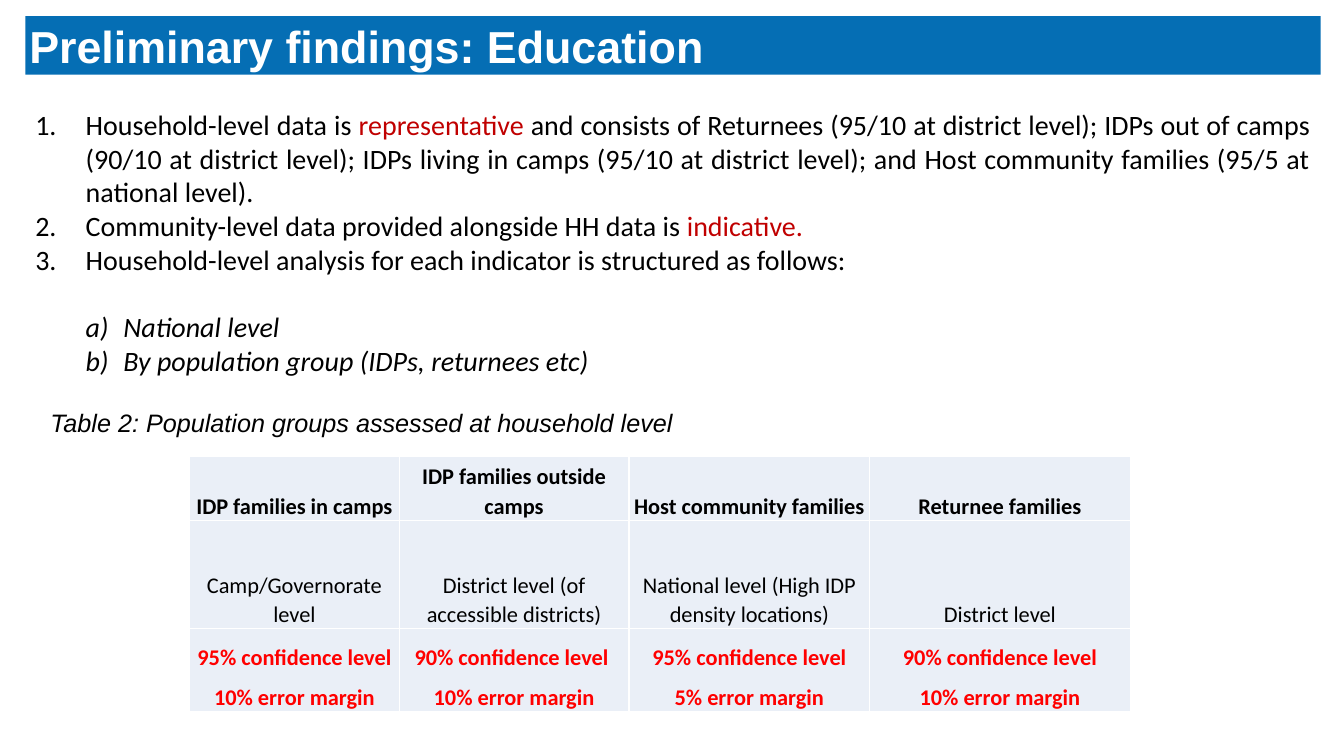
from lxml import etree
from pptx import Presentation
from pptx.dml.color import RGBColor
from pptx.enum.shapes import MSO_SHAPE
from pptx.enum.text import MSO_ANCHOR, PP_ALIGN
from pptx.oxml.ns import qn
from pptx.util import Cm, Pt

RECT = MSO_SHAPE.RECTANGLE
MIDDLE, BOTTOM = MSO_ANCHOR.MIDDLE, MSO_ANCHOR.BOTTOM
LEFT, CENTER, JUSTIFY = PP_ALIGN.LEFT, PP_ALIGN.CENTER, PP_ALIGN.JUSTIFY

COLORS = {"blue": "056EB4", "white": "FFFFFF", "black": "000000",
          "dark red": "C00000", "red": "FF0000", "pale": "EAEFF7"}

TITLE = "Preliminary findings: Education"
NOTES = [
    [("Household-level data is ", "black"),
     ("representative ", "dark red"),
     ("and consists of Returnees (95/10 at district level); IDPs out of camps "
      "(90/10 at district level); IDPs living in camps (95/10 at district level); "
      "and Host community families (95/5 at national level). ", "black")],
    [("Community-level data provided alongside HH data is ", "black"),
     ("indicative. ", "dark red")],
    [("Household-level analysis for each indicator is structured as follows:", "black")],
]
LEVELS = ["National level ", "By population group (IDPs, returnees etc)"]
CAPTION = "Table 2: Population groups assessed at household level"
GROUPS = [
    ["IDP families in camps", "IDP families outside camps",
     "Host community families", "Returnee families"],
    ["Camp/Governorate level", "District level (of accessible districts)",
     "National level (High IDP density locations)", "District level"],
    ["95% confidence level\n10% error margin", "90% confidence level \n10% error margin",
     "95% confidence level\n5% error margin", "90% confidence level\n10% error margin"],
]
STYLES = [("black", True), ("black", False), ("red", True)]
WIDTHS = [5.28, 5.79, 6.07, 6.56]
HEIGHTS = [1.62, 2.73, 2.1]


def rgb(name):
    return RGBColor.from_string(COLORS[name])


def style(font, face, size, color, bold=False, italic=False):
    font.name, font.size = face, Pt(size)
    font.color.rgb = rgb(color)
    font.bold, font.italic = bold, italic


def indent(para, left, hang, number=None):
    props = para._p.get_or_add_pPr()
    props.set("marL", str(Cm(left)))
    props.set("indent", str(-Cm(hang)))
    if number:
        etree.SubElement(props, qn("a:buFont"), typeface="+mj-lt")
        etree.SubElement(props, qn("a:buAutoNum"), type=number)


def border(cell):
    props = cell._tc.get_or_add_tcPr()
    for side in ("lnL", "lnR", "lnT", "lnB"):
        line = etree.SubElement(props, qn("a:" + side), w=str(Pt(1)))
        fill = etree.SubElement(line, qn("a:solidFill"))
        etree.SubElement(fill, qn("a:srgbClr"), val=COLORS["white"])


def add_title(slide):
    bar = slide.shapes.add_shape(RECT, Cm(0.64), Cm(0.41), Cm(32.64), Cm(1.47))
    bar.shadow.inherit = False
    bar.fill.solid()
    bar.fill.fore_color.rgb = rgb("blue")
    bar.line.fill.background()
    frame = bar.text_frame
    frame.margin_left = frame.margin_right = 0
    frame.margin_top = frame.margin_bottom = 0
    frame.vertical_anchor = MIDDLE
    frame.text = TITLE
    para = frame.paragraphs[0]
    para.alignment, para.space_before = LEFT, Pt(8)
    indent(para, 1.07, 0.97)
    style(para.font, "Arial", 32, "white", bold=True)


def add_notes(slide):
    frame = slide.shapes.add_textbox(Cm(0.64), Cm(2.59), Cm(32.64), Cm(15.65)).text_frame
    frame.word_wrap = True
    items = [(runs, 0) for runs in NOTES] + [([(text, "black")], 1) for text in LEVELS]
    for i, (runs, level) in enumerate(items):
        para = frame.add_paragraph() if i else frame.paragraphs[0]
        para.alignment, para.level = JUSTIFY, level
        if i == len(NOTES):
            para.space_before = Pt(24)
        if level:
            indent(para, 2.22, 0.95, "alphaLcParenR")
        else:
            indent(para, 1.27, 1.27, "arabicPeriod")
        style(para.font, "Calibri", 20, "black", italic=level == 1)
        for text, color in runs:
            run = para.add_run()
            run.text = text
            run.font.color.rgb = rgb(color)


def add_groups(slide):
    table = slide.shapes.add_table(len(HEIGHTS), len(WIDTHS), Cm(4.78), Cm(11.49),
                                   Cm(sum(WIDTHS)), Cm(sum(HEIGHTS))).table
    table.first_row = table.horz_banding = False
    for col, width in zip(table.columns, WIDTHS):
        col.width = Cm(width)
    for row, height, texts, (color, bold) in zip(table.rows, HEIGHTS, GROUPS, STYLES):
        row.height = Cm(height)
        for cell, text in zip(row.cells, texts):
            border(cell)
            cell.fill.solid()
            cell.fill.fore_color.rgb = rgb("pale")
            cell.margin_left = cell.margin_right = 0
            cell.margin_top = cell.margin_bottom = 0
            cell.vertical_anchor = BOTTOM
            cell.text = text
            for para in cell.text_frame.paragraphs:
                para.alignment = CENTER
                para.line_spacing, para.space_after = 1.07, Pt(8)
                style(para.font, "Calibri", 16, color, bold)


def add_caption(slide):
    frame = slide.shapes.add_textbox(Cm(1.02), Cm(10.13), Cm(32.26), Cm(1.02)).text_frame
    frame.word_wrap = True
    frame.text = CAPTION
    style(frame.paragraphs[0].font, "Arial", 18, "black", italic=True)


def main():
    deck = Presentation()
    deck.slide_width, deck.slide_height = Cm(33.87), Cm(19.05)
    slide = deck.slides.add_slide(deck.slide_layouts[6])
    add_title(slide)
    add_notes(slide)
    add_groups(slide)
    add_caption(slide)
    deck.save("out.pptx")


if __name__ == "__main__":
    main()
